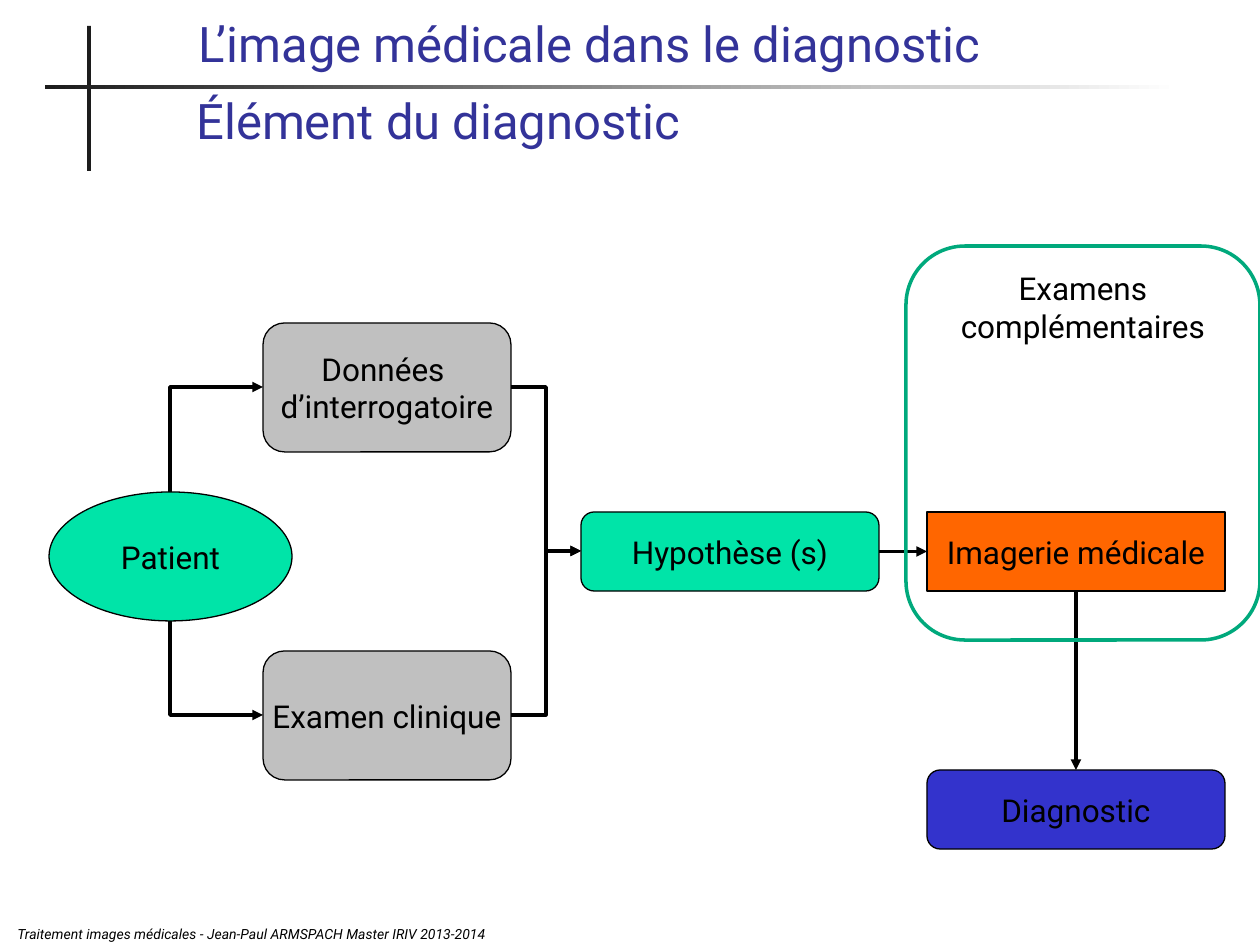
from dataclasses import dataclass

import pptx
import pptx.dml.color
import pptx.enum.dml
import pptx.enum.shapes
import pptx.enum.text
import pptx.oxml
import pptx.oxml.ns
import pptx.util

SCALE = 914400 / 126
FONT = "Roboto"
HUES = {
    "ink": "000000", "bar": "1C1C1C", "white": "FFFFFF", "title": "333399",
    "green": "00E4A8", "grey": "C0C0C0", "orange": "FF6600",
    "blue": "3333CC", "frame": "00A97C",
}
KIND = pptx.enum.shapes.MSO_SHAPE
LINK = pptx.enum.shapes.MSO_CONNECTOR
ALIGN = pptx.enum.text.PP_ALIGN
ANCHOR = pptx.enum.text.MSO_ANCHOR


@dataclass
class Box:
    text: str
    left: int
    top: int
    width: int
    height: int
    fill: str
    kind: int = KIND.ROUNDED_RECTANGLE

    @property
    def right(self) -> int:
        return self.left + self.width

    @property
    def base(self) -> int:
        return self.top + self.height

    @property
    def mid(self) -> tuple[int, int]:
        return self.left + self.width // 2, self.top + self.height // 2


BIG = (248, 129)
SMALL = (298, 79)
patient = Box("Patient", 49, 492, 243, 129, "green", KIND.OVAL)
data = Box("Données \nd’interrogatoire", 263, 323, *BIG, "grey")
exam = Box("Examen clinique", 263, 651, *BIG, "grey")
guess = Box("Hypothèse (s)", 581, 512, *SMALL, "green")
scan = Box("Imagerie médicale", 927, 512, *SMALL, "orange", KIND.RECTANGLE)
result = Box("Diagnostic", 927, 770, *SMALL, "blue")


def px(*nums: int) -> list[int]:
    """Turn pixels into EMU."""
    return [round(num * SCALE) for num in nums]


def rgb(name: str) -> pptx.dml.color.RGBColor:
    return pptx.dml.color.RGBColor.from_string(HUES[name])


def write(shape, text: str, *, size: int = 18, hue: str = "ink",
          align=ALIGN.CENTER, anchor=ANCHOR.MIDDLE, wrap: bool = True,
          italic: bool = False, space: float = 1.0) -> None:
    frame = shape.text_frame
    frame.word_wrap = wrap
    frame.auto_size = pptx.enum.text.MSO_AUTO_SIZE.NONE
    frame.vertical_anchor = anchor
    for index, line in enumerate(text.split("\n")):
        para = frame.add_paragraph() if index else frame.paragraphs[0]
        para.alignment = align
        para.line_spacing = space
        run = para.add_run()
        run.text = line
        run.font.name = FONT
        run.font.size = pptx.util.Pt(size)
        run.font.italic = italic
        run.font.color.rgb = rgb(hue)


def draw_bar(slide, left: int, top: int, width: int, height: int,
             fade: bool = False) -> None:
    bar = slide.shapes.add_shape(KIND.RECTANGLE, *px(left, top, width, height))
    bar.shadow.inherit = False
    bar.line.fill.background()
    if fade:
        bar.fill.gradient()
        bar.fill.gradient_angle = 0
        for stop, hue in zip(bar.fill.gradient_stops, ("bar", "white")):
            stop.color.rgb = rgb(hue)
    else:
        bar.fill.solid()
        bar.fill.fore_color.rgb = rgb("bar")


def draw_box(slide, box: Box):
    shape = slide.shapes.add_shape(
        box.kind, *px(box.left, box.top, box.width, box.height))
    shape.shadow.inherit = False
    shape.fill.solid()
    shape.fill.fore_color.rgb = rgb(box.fill)
    shape.line.color.rgb = rgb("ink")
    shape.line.width = pptx.util.Pt(0.75)
    write(shape, box.text, wrap=False)
    return shape


def draw_link(slide, start: tuple[int, int], end: tuple[int, int],
              kind=LINK.STRAIGHT, tip: str = "tail"):
    """Draw a connector; tip "head" puts the arrow at its start."""
    link = slide.shapes.add_connector(kind, *px(*start, *end))
    link.line.color.rgb = rgb("ink")
    link.line.width = pptx.util.Pt(2)
    pptx.oxml.ns.qn("a:ln")
    line = link.line._get_or_add_ln()
    arrow = pptx.oxml.parse_xml(
        f'<a:{tip}End {pptx.oxml.ns.nsdecls("a")} type="triangle"/>')
    line.append(arrow)
    line.addnext(pptx.oxml.parse_xml(
        f'<a:effectLst {pptx.oxml.ns.nsdecls("a")}/>'))
    return link


def draw_turn(slide, start: tuple[int, int], end: tuple[int, int]) -> None:
    """Draw a one-corner connector with its arrow at the start."""
    link = draw_link(slide, start, end, LINK.ELBOW, "head")
    geom = link._element.spPr.find(pptx.oxml.ns.qn("a:prstGeom"))
    geom.set("prst", "bentConnector2")


def main() -> None:
    deck = pptx.Presentation()
    deck.slide_width, deck.slide_height = px(1260, 945)
    slide = deck.slides.add_slide(deck.slide_layouts[5])

    draw_bar(slide, 87, 26, 4, 145)
    draw_bar(slide, 45, 85, 1134, 4, fade=True)

    title = slide.shapes.title
    title.left, title.top, title.width, title.height = px(186, 0, 1074, 79)
    head = {"size": 28, "hue": "title", "align": ALIGN.LEFT,
            "anchor": ANCHOR.BOTTOM}
    write(title, "L’image médicale dans le diagnostic", **head)
    under = slide.shapes.add_textbox(*px(184, 96, 1076, 59))
    write(under, "Élément du diagnostic", space=0.8, **head)
    foot = slide.shapes.add_textbox(*px(5, 929, 645, 20))
    write(foot, "Traitement images médicales - Jean-Paul ARMSPACH "
          "Master IRIV 2013-2014", size=8, italic=True,
          align=ALIGN.LEFT, anchor=ANCHOR.BOTTOM)

    for box in (patient, data, exam):
        draw_box(slide, box)
    guess_box, scan_box, result_box = [
        draw_box(slide, box) for box in (guess, scan, result)]

    for box, edge in ((data, patient.top), (exam, patient.base)):
        draw_turn(slide, (box.left, box.mid[1]), (patient.mid[0], edge))
        draw_link(slide, (box.right, box.mid[1]),
                  (guess.left, guess.mid[1]), LINK.ELBOW)

    across = draw_link(slide, (guess.right, guess.mid[1]),
                       (scan.left, scan.mid[1]))
    across.begin_connect(guess_box, 3)
    across.end_connect(scan_box, 1)
    down = draw_link(slide, (scan.mid[0], scan.base),
                     (result.mid[0], result.top))
    down.begin_connect(scan_box, 2)
    down.end_connect(result_box, 0)

    frame = slide.shapes.add_shape(
        KIND.ROUNDED_RECTANGLE, *px(906, 246, 354, 394))
    frame.shadow.inherit = False
    frame.fill.background()
    frame.line.color.rgb = rgb("frame")
    frame.line.width = pptx.util.Pt(2)
    write(frame, "Examens complémentaires", anchor=ANCHOR.TOP)

    deck.save("out.pptx")


if __name__ == "__main__":
    main()
